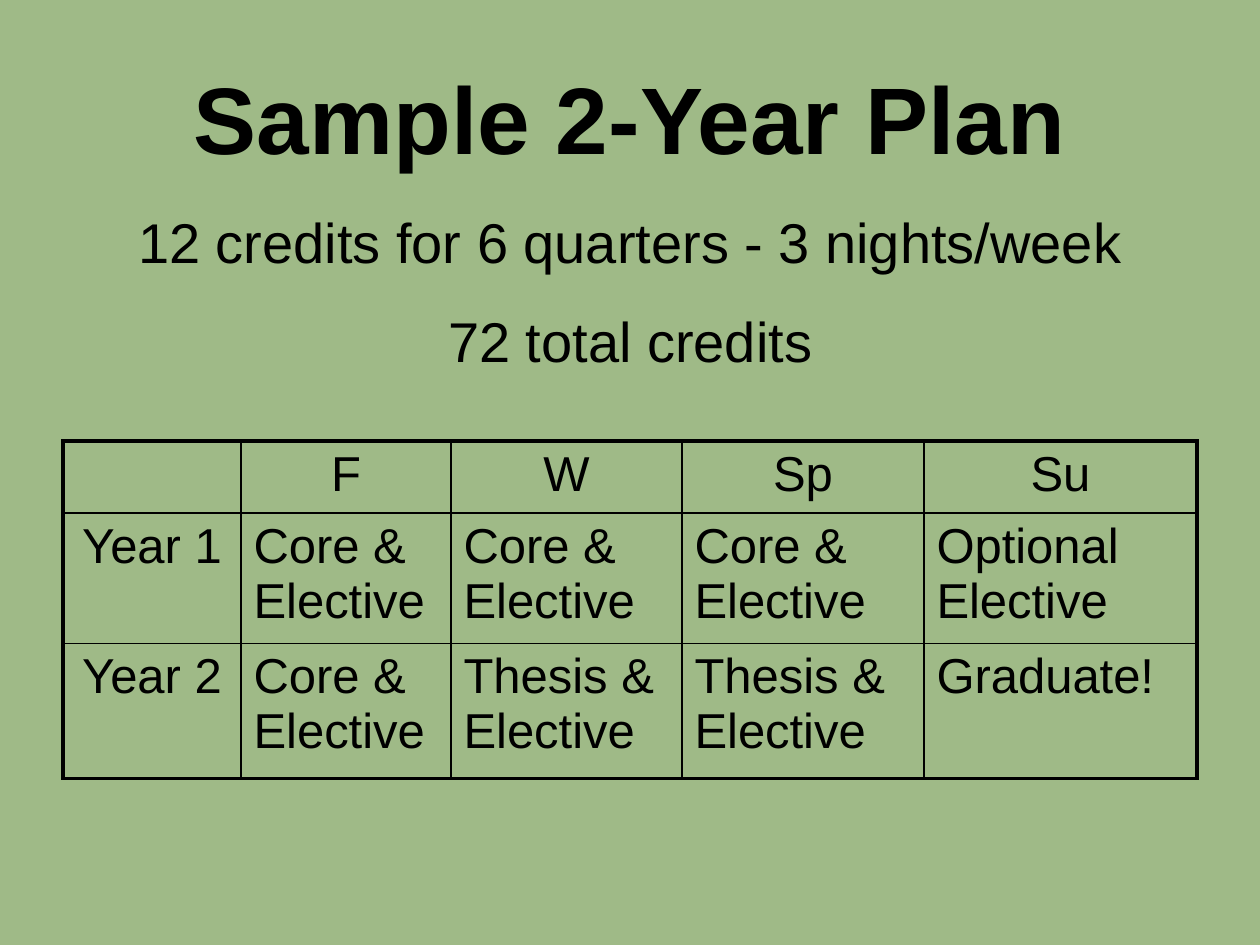
import pptx
import pptx.util
import pptx.dml.color
import pptx.enum.text
import pptx.oxml
import pptx.oxml.ns

PX = 914400 // 126
BLACK = pptx.dml.color.RGBColor(0x00, 0x00, 0x00)
GREEN = pptx.dml.color.RGBColor(0x9F, 0xBA, 0x87)
CENTER = pptx.enum.text.PP_ALIGN.CENTER
LEFT = pptx.enum.text.PP_ALIGN.LEFT
MIDDLE = pptx.enum.text.MSO_ANCHOR.MIDDLE


def add_text(p, text, size, align, bold=False):
    p.alignment = align
    r = p.add_run()
    r.text = text
    r.font.name = "Arial"
    r.font.size = pptx.util.Pt(size)
    r.font.bold = bold
    r.font.color.rgb = BLACK


def add_border(cell, side, width):
    cell._tc.get_or_add_tcPr().append(pptx.oxml.parse_xml(
        f'<a:{side} {pptx.oxml.ns.nsdecls("a")} w="{pptx.util.Pt(width)}">'
        f'<a:solidFill><a:srgbClr val="{BLACK}"/></a:solidFill></a:{side}>'))


prs = pptx.Presentation()
prs.slide_width = 1260 * PX
prs.slide_height = 945 * PX
s = prs.slides.add_slide(prs.slide_layouts[6])
s.background.fill.solid()
s.background.fill.fore_color.rgb = GREEN

# Title
sp = s.shapes.add_textbox(63 * PX, 38 * PX, 1134 * PX, 157 * PX)
tf = sp.text_frame
tf.word_wrap = True
tf.vertical_anchor = MIDDLE
add_text(tf.paragraphs[0], "Sample 2-Year Plan", 54, CENTER, True)

# Plan table
rows = [
    ["", "F", "W", "Sp", "Su"],
    ["Year 1"] + ["Core & Elective"] * 3 + ["Optional Elective"],
    ["Year 2", "Core & Elective", "Thesis & Elective", "Thesis & Elective", "Graduate!"],
]
widths = [178, 210, 231, 242, 273]
heights = [72, 128, 135]
last_row, last_col = len(rows) - 1, len(widths) - 1
table = s.shapes.add_table(len(rows), len(widths), 63 * PX, 441 * PX,
                           sum(widths) * PX, sum(heights) * PX).table
table.first_row = False
table.horz_banding = False
for column, width in zip(table.columns, widths):
    column.width = width * PX
for row, height in zip(table.rows, heights):
    row.height = height * PX

for i, texts in enumerate(rows):
    for j, text in enumerate(texts):
        cell = table.cell(i, j)
        # Thick lines on the outer edge, thin ones inside
        for side, outer in (("lnL", j == 0), ("lnR", j == last_col),
                            ("lnT", i == 0), ("lnB", i == last_row)):
            add_border(cell, side, 2.25 if outer else 1)
        cell.fill.background()
        if text:
            align = CENTER if i == 0 or j == 0 else LEFT
            add_text(cell.text_frame.paragraphs[0], text, 28, align)

# Credit summary
sp = s.shapes.add_textbox(95 * PX, 199 * PX, 1071 * PX, 183 * PX)
tf = sp.text_frame
tf.word_wrap = True
tf.vertical_anchor = MIDDLE
add_text(tf.paragraphs[0], "12 credits for 6 quarters - 3 nights/week", 32, CENTER)
p = tf.add_paragraph()
p.space_before = pptx.util.Pt(18)
add_text(p, "72 total credits", 32, CENTER)

prs.save("out.pptx")
